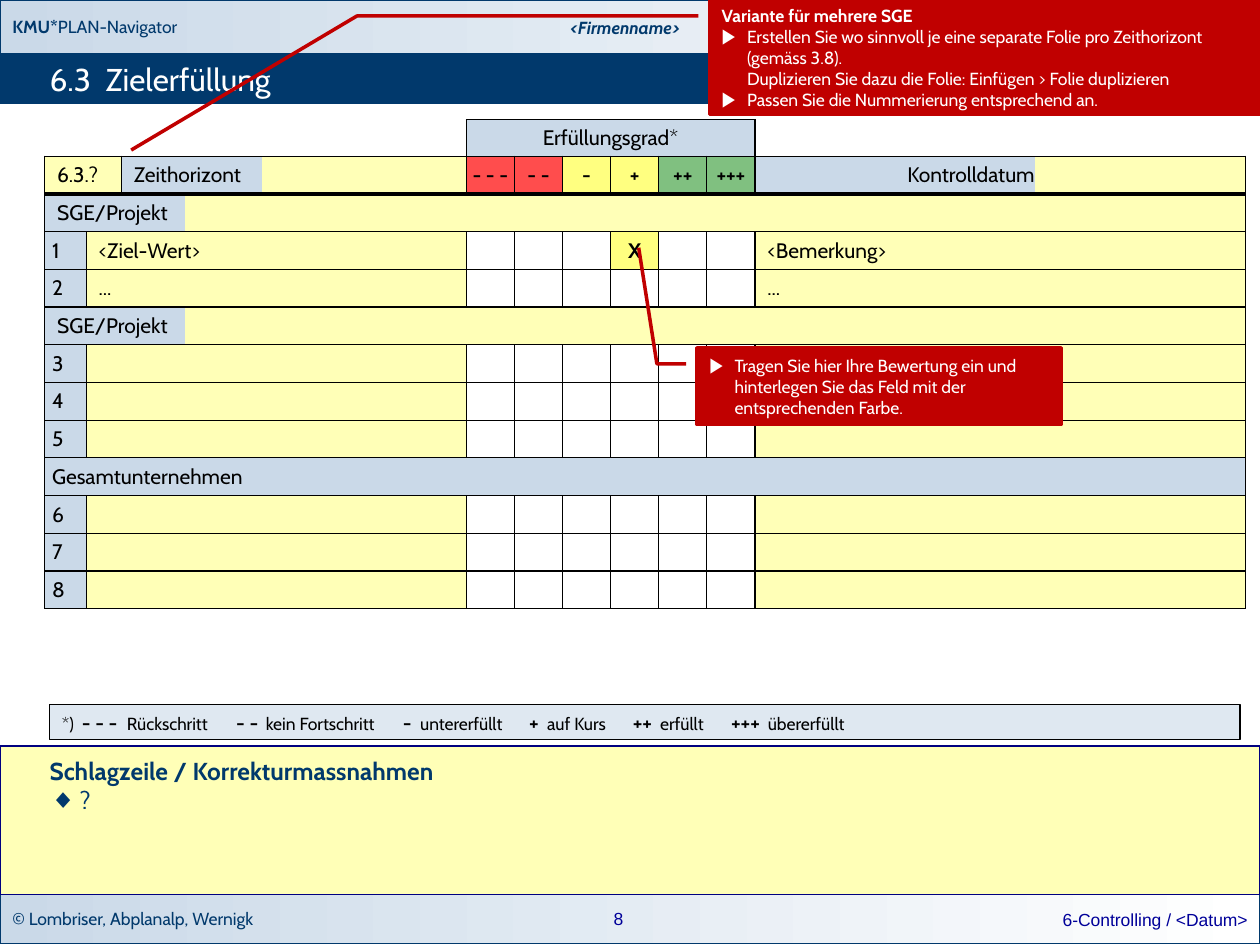
from dataclasses import dataclass
from lxml.etree import SubElement
from pptx import Presentation
from pptx.dml.color import RGBColor
from pptx.enum.shapes import MSO_SHAPE
from pptx.enum.text import MSO_ANCHOR, PP_ALIGN
from pptx.oxml.ns import qn
from pptx.util import Cm, Pt


@dataclass(frozen=True)
class Theme:
    navy: str = "01396C"
    pale_blue: str = "CAD9E8"
    legend_blue: str = "DFE8F1"
    footer_blue: str = "000099"
    frame_blue: str = "000080"
    yellow: str = "FFFFB7"
    signal_red: str = "FF4D4D"
    signal_yellow: str = "FFFF80"
    signal_green: str = "80C080"
    note_red: str = "C00000"
    white: str = "FFFFFF"
    black: str = "000000"
    font: str = "Cabin"
    footer_font: str = "Arial"
    small: int = 10
    body: int = 12
    heading: int = 14
    title: int = 18


@dataclass
class TableCell:
    span: int = 1
    text: str = ""
    fill: str = "FFFFFF"
    bold: bool = False
    align: int = PP_ALIGN.LEFT
    left: float = 0.25
    right: float = 0.25
    open_sides: str = ""


theme = Theme()


def write(paragraph, text, *, size=theme.small, color=theme.black, bold=False, italic=False,
          font=theme.font, align=None, bullet=None, bullet_size=100, indent=0.51, tabs=()):
    properties = paragraph._p.get_or_add_pPr()
    if bullet:
        properties.set("marL", str(Cm(indent)))
        properties.set("indent", str(-Cm(indent)))
        bullet_color = SubElement(properties, qn("a:buClr"))
        SubElement(bullet_color, qn("a:srgbClr"), val=color)
        SubElement(properties, qn("a:buSzPct"), val=str(bullet_size * 1000))
        SubElement(properties, qn("a:buFont"), typeface=theme.footer_font)
        SubElement(properties, qn("a:buChar"), char=bullet)
    if tabs:
        tab_list = SubElement(properties, qn("a:tabLst"))
        for position in tabs:
            SubElement(tab_list, qn("a:tab"), pos=str(Cm(position)), algn="l")
    if align is not None:
        paragraph.alignment = align
    for number, line in enumerate(text.split("\n")):
        if number:
            paragraph.add_line_break()
        run = paragraph.add_run()
        run.text = line
        run.font.size = Pt(size)
        run.font.name = font
        run.font.bold = bold
        run.font.italic = italic
        run.font.color.rgb = RGBColor.from_string(color)


def add_panel(left, top, width, height, *, fill, line, line_width=0.75, kind=MSO_SHAPE.RECTANGLE,
              anchor=MSO_ANCHOR.MIDDLE, margins=(0.25, 0.1, 0.25, 0.1)):
    shape = slide.shapes.add_shape(kind, Cm(left), Cm(top), Cm(width), Cm(height))
    shape.shadow.inherit = False
    if isinstance(fill, tuple):
        shape.fill.gradient()
        shape.fill.gradient_angle = 0
        for stop, color in zip(shape.fill.gradient_stops, fill):
            stop.color.rgb = RGBColor.from_string(color)
    else:
        shape.fill.solid()
        shape.fill.fore_color.rgb = RGBColor.from_string(fill)
    shape.line.color.rgb = RGBColor.from_string(line)
    shape.line.width = Pt(line_width)
    frame = shape.text_frame
    frame.word_wrap = True
    frame.vertical_anchor = anchor
    frame.margin_left, frame.margin_top, frame.margin_right, frame.margin_bottom = map(Cm, margins)
    frame.paragraphs[0].alignment = PP_ALIGN.LEFT
    return shape


presentation = Presentation()
presentation.slide_width = Cm(25.4)
presentation.slide_height = Cm(19.05)
slide = presentation.slides.add_slide(presentation.slide_layouts[6])

fade = (theme.pale_blue, theme.white)
footer = add_panel(0, 18.03, 25.4, 0.99, fill=fade, line=theme.navy)
write(footer.text_frame.paragraphs[0], "© Lombriser, Abplanalp, Wernigk", color=theme.navy)
header = add_panel(0, 0, 25.4, 1.09, fill=fade, line=theme.navy)
write(header.text_frame.paragraphs[0], "KMU*", color=theme.navy, bold=True)
write(header.text_frame.paragraphs[0], "PLAN-Navigator", color=theme.navy)
add_panel(0, 1.09, 25.4, 0.99, fill=theme.navy, line=theme.navy)

footer_format = dict(color=theme.footer_blue, font=theme.footer_font)
labels = [
    (8.1, 0, 9, 1.12, 0.25, "<Firmenname>",
     dict(color=theme.navy, bold=True, italic=True, align=PP_ALIGN.CENTER)),
    (17.35, 18.03, 8.05, 1.02, 0.25, "6-Controlling / <Datum>",
     dict(align=PP_ALIGN.RIGHT, **footer_format)),
    (11.86, 18.03, 1.22, 0.99, 0.25, "8", dict(align=PP_ALIGN.CENTER, **footer_format)),
    (1, 1.09, 23.6, 0.99, 0, "6.3\tZielerfüllung",
     dict(size=theme.title, color=theme.white, tabs=[1.13])),
]
for left, top, width, height, margin, text, text_format in labels:
    frame = slide.shapes.add_textbox(Cm(left), Cm(top), Cm(width), Cm(height)).text_frame
    frame.word_wrap = True
    frame.vertical_anchor = MSO_ANCHOR.MIDDLE
    frame.margin_left = frame.margin_right = Cm(margin)
    frame.margin_top = frame.margin_bottom = 0
    write(frame.paragraphs[0], text, **text_format)

ratings = [("- - -", theme.signal_red), ("- -", theme.signal_red), ("-", theme.signal_yellow),
           ("+", theme.signal_yellow), ("++", theme.signal_green), ("+++", theme.signal_green)]
center = PP_ALIGN.CENTER
project_row = [TableCell(3, "SGE/Projekt", theme.pale_blue, open_sides="R"),
               TableCell(12, fill=theme.yellow, open_sides="L")]
rows = [
    [TableCell(2, open_sides="LRT"), TableCell(2, open_sides="LRT"), TableCell(open_sides="LT"),
     TableCell(6, "Erfüllungsgrad*", theme.pale_blue, align=center), TableCell(open_sides="RT")]
    + [TableCell(open_sides="LRT")] * 3,
    [TableCell(2, "6.3.?", theme.yellow, right=0.05),
     TableCell(2, "Zeithorizont", theme.pale_blue, right=0, open_sides="R"),
     TableCell(fill=theme.yellow, open_sides="L")]
    + [TableCell(1, text, fill, True, center, 0, 0) for text, fill in ratings]
    + [TableCell(2, "Kontrolldatum", theme.pale_blue, False, PP_ALIGN.RIGHT, 0, 0, "R"),
       TableCell(2, fill=theme.yellow, open_sides="L")],
]
goals = {1: ("<Ziel-Wert>", "<Bemerkung>"), 2: ("...", "...")}
for number in range(1, 9):
    if number in (1, 3):
        rows.append(project_row)
    if number == 6:
        rows.append([TableCell(15, "Gesamtunternehmen", theme.pale_blue, left=0.15)])
    goal, remark = goals.get(number, ("", ""))
    marks = [TableCell() for rating in ratings]
    if number == 1:
        marks[3] = TableCell(1, "X", theme.signal_yellow, True, center, 0.05, 0.05)
    rows.append([TableCell(1, str(number), theme.pale_blue, left=0.15, right=0.15),
                 TableCell(4, goal, theme.yellow), *marks, TableCell(4, remark, theme.yellow)])

column_widths = [0.84, 0.71, 1.27, 1.57, 4.11] + [0.97] * 6 + [2.95, 2.69, 1.96, 2.29]
table = slide.shapes.add_table(len(rows), len(column_widths), Cm(0.9), Cm(2.41),
                               Cm(sum(column_widths)), Cm(9.86)).table
table.first_row = table.horz_banding = False
for column, width in zip(table.columns, column_widths):
    column.width = Cm(width)
for row_index, row in enumerate(rows):
    table.rows[row_index].height = Cm(0.76 if row_index else 0.74)
    column_index = 0
    for entry in row:
        last = column_index + entry.span - 1
        first_cell = table.cell(row_index, column_index)
        if entry.span > 1:
            first_cell.merge(table.cell(row_index, last))
        for position in range(column_index, last + 1):
            cell = table.cell(row_index, position)
            properties = cell._tc.get_or_add_tcPr()
            for side in "LRTB":
                thick = (row_index, side) in ((1, "B"), (2, "T"))
                border = SubElement(properties, qn(f"a:ln{side}"), w=str(Pt(2.25 if thick else 0.75)))
                inner = side in "LR" and position != column_index
                if side in entry.open_sides or (inner and (side == "L" or position != last)):
                    SubElement(border, qn("a:noFill"))
                else:
                    solid = SubElement(border, qn("a:solidFill"))
                    SubElement(solid, qn("a:srgbClr"), val=theme.black)
            cell.fill.solid()
            cell.fill.fore_color.rgb = RGBColor.from_string(entry.fill)
            cell.vertical_anchor = MSO_ANCHOR.MIDDLE
            cell.margin_left, cell.margin_right = Cm(entry.left), Cm(entry.right)
            cell.margin_top = cell.margin_bottom = Cm(0.1)
            if position == column_index and entry.text:
                write(cell.text_frame.paragraphs[0], entry.text, size=theme.body,
                      bold=entry.bold, align=entry.align)
            else:
                SubElement(cell.text_frame.paragraphs[0]._p, qn("a:endParaRPr"), sz=str(theme.body * 100))
        column_index = last + 1

actions = add_panel(0, 15.04, 25.4, 2.99, fill=theme.yellow, line=theme.frame_blue,
                    anchor=MSO_ANCHOR.TOP, margins=(1, 0.2, 0.5, 0.2)).text_frame
write(actions.paragraphs[0], "Schlagzeile / Korrekturmassnahmen", size=theme.heading,
      color=theme.navy, bold=True)
write(actions.add_paragraph(), "?", size=theme.heading, color=theme.navy, align=PP_ALIGN.LEFT,
      bullet="◆", bullet_size=110, indent=0.61)

legend = add_panel(1, 14.2, 24, 0.71, fill=theme.legend_blue, line=theme.black).text_frame.paragraphs[0]
write(legend, "*)\t", tabs=[0.4, 1.31, 3.51, 4.11, 6.87, 7.22, 9.42, 9.78, 11.51, 12.06, 13.49, 14.23])
meanings = ["Rückschritt", "kein Fortschritt", "untererfüllt", "auf Kurs", "erfüllt", "übererfüllt"]
for (symbol, fill), meaning in zip(ratings, meanings):
    write(legend, symbol, size=theme.body, bold=True)
    write(legend, "\t" + meaning + ("" if meaning == meanings[-1] else "\t"))

callouts = [
    ((14.3, 0, 11.1, 2.31), (0.14, -0.02, 0.14, -0.64, 1.31, -1.05), "Variante für mehrere SGE",
     ["Erstellen Sie wo sinnvoll je eine separate Folie pro Zeithorizont (gemäss 3.8).\n"
      "Duplizieren Sie dazu die Folie: Einfügen > Folie duplizieren",
      "Passen Sie die Nummerierung entsprechend an."]),
    ((14.05, 7.01, 7.34, 1.55), (0.21, -0.03, 0.21, -0.11, -1.3, -0.16), "",
     ["Tragen Sie hier Ihre Bewertung ein und hinterlegen Sie das Feld mit der entsprechenden Farbe."]),
]
for box, pointer, heading, notes in callouts:
    callout = add_panel(*box, fill=theme.note_red, line=theme.note_red, line_width=2,
                        kind=MSO_SHAPE.LINE_CALLOUT_2)
    for index, value in enumerate(pointer):
        callout.adjustments[index] = value
    frame = callout.text_frame
    if heading:
        write(frame.paragraphs[0], heading, color=theme.white, bold=True)
    for index, note in enumerate(notes):
        paragraph = frame.add_paragraph() if heading or index else frame.paragraphs[0]
        write(paragraph, note, color=theme.white, align=PP_ALIGN.LEFT, bullet="▶", bullet_size=120)

presentation.save("out.pptx")
